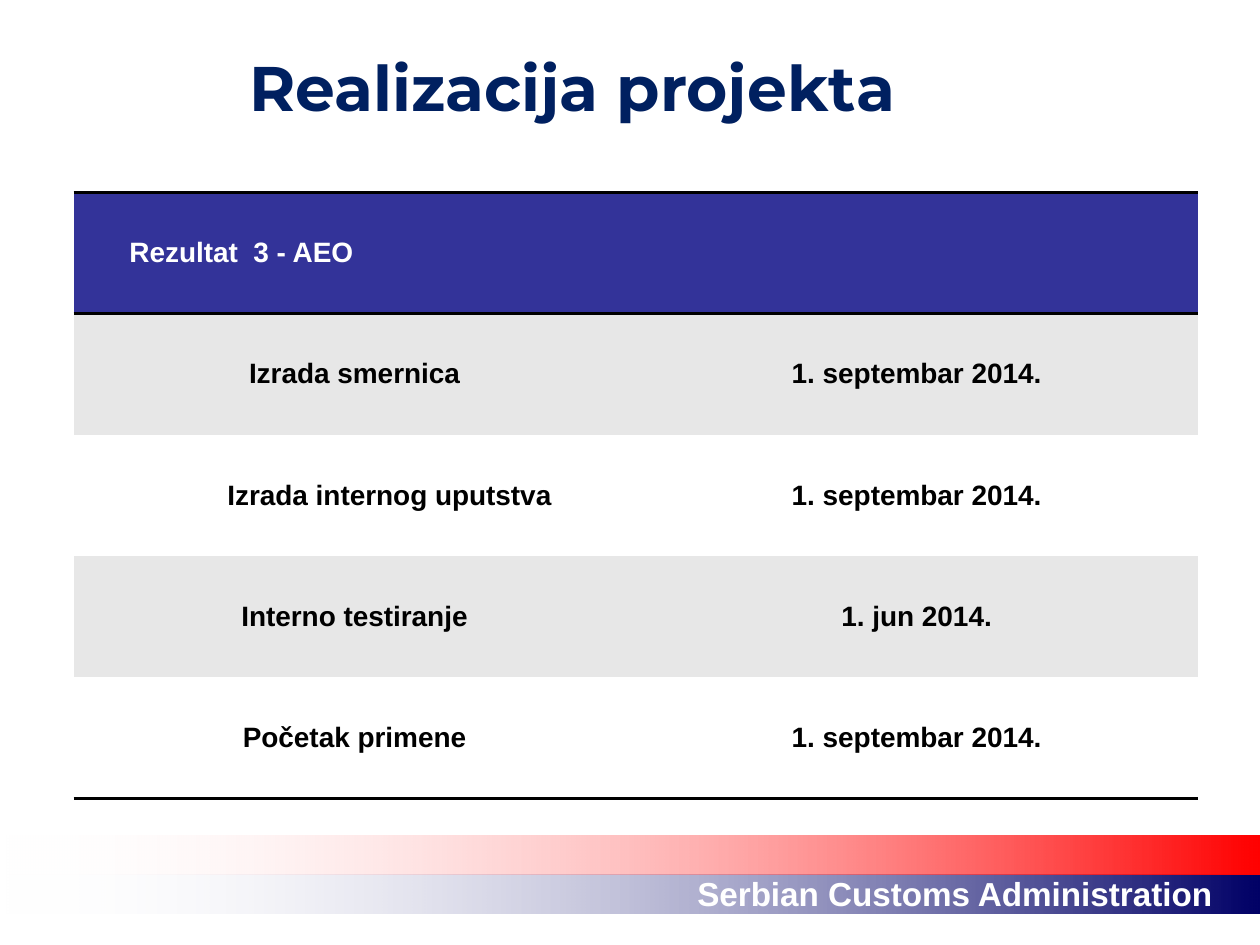
"""Build the project realisation slide with its result table and footer bands."""
from dataclasses import dataclass

from lxml.etree import SubElement
from pptx import Presentation
from pptx.dml.color import RGBColor
from pptx.enum.shapes import MSO_SHAPE
from pptx.enum.text import MSO_ANCHOR, PP_ALIGN
from pptx.oxml.ns import qn
from pptx.slide import Slide
from pptx.table import _Cell
from pptx.text.text import TextFrame
from pptx.util import Pt

NO_STYLE = "{2D5ABB26-0587-4C30-8999-92F81FD0307C}"
INSET = 5
COL_WIDTH = 321.2
ROW_HEIGHT = 69.3


@dataclass
class Band:
    top: float
    color: str


@dataclass
class Label:
    text: str
    left: float
    top: float
    width: float
    height: float
    size: float
    font: str
    color: str
    align: PP_ALIGN


@dataclass
class Row:
    task: str
    date: str
    fill: str
    color: str = "000000"
    align: PP_ALIGN = PP_ALIGN.CENTER
    indent: float = 0
    borders: tuple[str, ...] = ()


BANDS = [Band(499.7, "000066"), Band(477.4, "FF0000")]
LABELS = [
    Label("Serbian Customs Administration", 357.8, 495.4, 342, 30, 19,
          "Arial", "FFFFFF", PP_ALIGN.RIGHT),
    Label("Realizacija projekta", 48, 24, 558, 51, 36,
          "Montserrat", "002060", PP_ALIGN.CENTER),
]
ROWS = [
    Row("Rezultat  3 - AEO", "", "333399", "FFFFFF", PP_ALIGN.LEFT, 27, ("a:lnT", "a:lnB")),
    Row("Izrada smernica", "1. septembar 2014.", "E7E7E7"),
    Row("Izrada internog uputstva", "1. septembar 2014.", "FFFFFF", indent=40),
    Row("Interno testiranje", "1. jun 2014.", "E7E7E7"),
    Row("Početak primene", "1. septembar 2014.", "FFFFFF", borders=("a:lnB",)),
]


def rgb(color: str) -> RGBColor:
    return RGBColor.from_string(color)


def write(tf: TextFrame, text: str, size: float, font: str, color: str,
          align: PP_ALIGN) -> None:
    tf.text = text
    p = tf.paragraphs[0]
    p.alignment = align
    for r in p.runs:
        r.font.size = Pt(size)
        r.font.name = font
        r.font.bold = True
        r.font.color.rgb = rgb(color)


def draw_band(s: Slide, band: Band) -> None:
    sp = s.shapes.add_shape(MSO_SHAPE.RECTANGLE, 0, Pt(band.top), Pt(720), Pt(22.3))
    sp.shadow.inherit = False
    sp.line.fill.background()
    sp.fill.gradient()
    sp.fill.gradient_angle = 0
    for stop, color in zip(sp.fill.gradient_stops, ("FFFFFF", band.color)):
        stop.color.rgb = rgb(color)
    white = next(sp._element.iter(qn("a:srgbClr")))
    SubElement(white, qn("a:alpha"), val="0")


def draw_label(s: Slide, label: Label) -> None:
    sp = s.shapes.add_textbox(Pt(label.left), Pt(label.top), Pt(label.width), Pt(label.height))
    tf = sp.text_frame
    tf.word_wrap = True
    tf.vertical_anchor = MSO_ANCHOR.MIDDLE
    write(tf, label.text, label.size, label.font, label.color, label.align)


def add_border(cell: _Cell, side: str) -> None:
    ln = SubElement(cell._tc.get_or_add_tcPr(), qn(side), w=str(Pt(2)))
    fill = SubElement(ln, qn("a:solidFill"))
    SubElement(fill, qn("a:srgbClr"), val="000000")


def draw_cell(cell: _Cell, row: Row, text: str, indent: float) -> None:
    for side in row.borders:
        add_border(cell, side)
    cell.fill.solid()
    cell.fill.fore_color.rgb = rgb(row.fill)
    cell.vertical_anchor = MSO_ANCHOR.MIDDLE
    cell.margin_left, cell.margin_right = Pt(INSET + indent), Pt(INSET)
    cell.margin_top = cell.margin_bottom = 0
    write(cell.text_frame, text, 16, "Arial", row.color, row.align)


def draw_table(s: Slide, rows: list[Row]) -> None:
    frame = s.shapes.add_table(len(rows), 2, Pt(42), Pt(109.9),
                               Pt(2 * COL_WIDTH), Pt(len(rows) * ROW_HEIGHT))
    table = frame.table
    table.horz_banding = False
    next(table._tbl.iter(qn("a:tableStyleId"))).text = NO_STYLE
    for col in table.columns:
        col.width = Pt(COL_WIDTH)
    for i, row in enumerate(rows):
        table.rows[i].height = Pt(ROW_HEIGHT)
        draw_cell(table.cell(i, 0), row, row.task, row.indent)
        draw_cell(table.cell(i, 1), row, row.date, 0)


def main() -> None:
    prs = Presentation()
    prs.slide_width, prs.slide_height = Pt(720), Pt(540)
    s = prs.slides.add_slide(prs.slide_layouts[6])
    for band in BANDS:
        draw_band(s, band)
    for label in LABELS:
        draw_label(s, label)
    draw_table(s, ROWS)
    prs.save("out.pptx")


if __name__ == "__main__":
    main()
